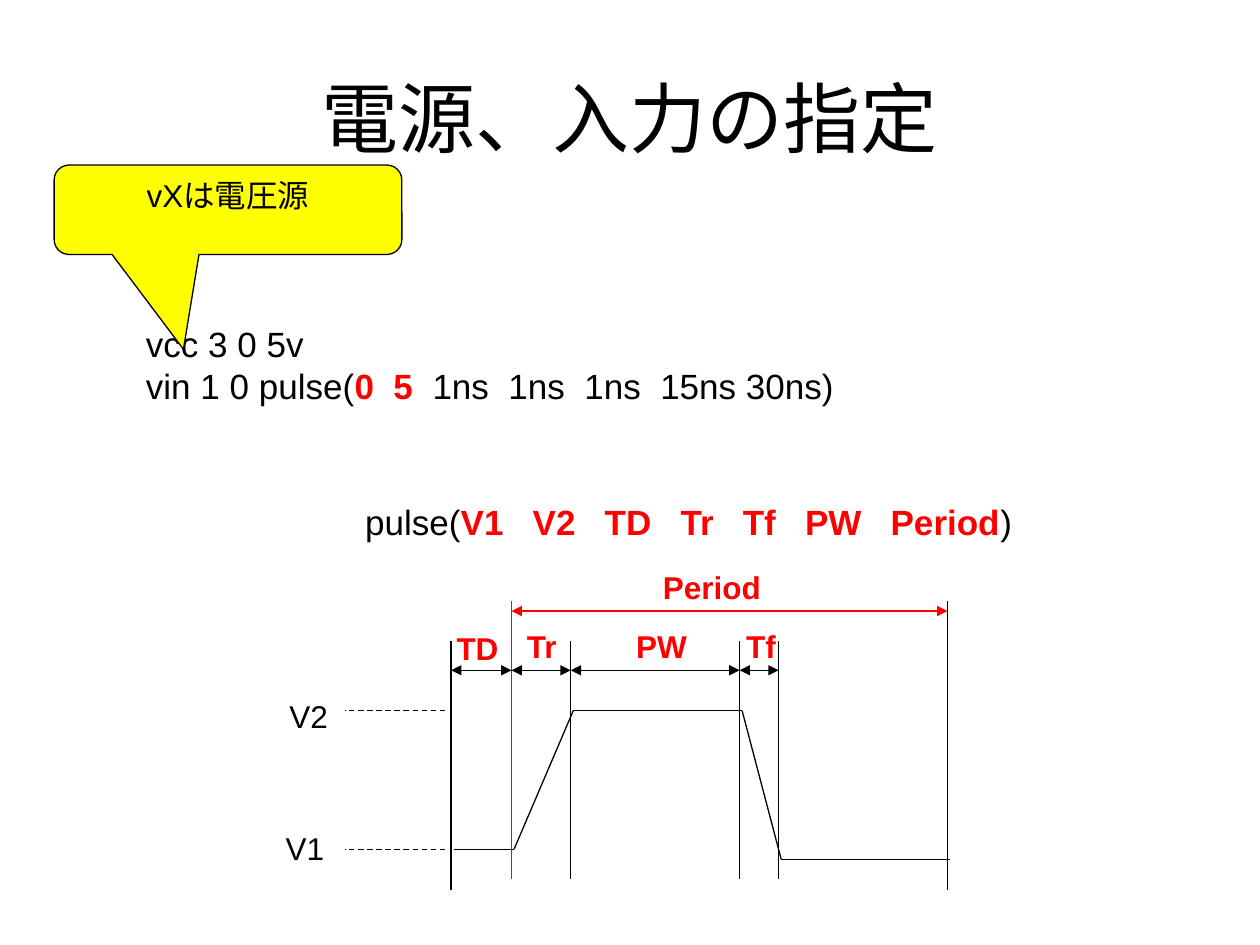
"""Build the slide on specifying power supplies and pulse inputs."""
from itertools import pairwise

from lxml import etree
from pptx import Presentation
from pptx.dml.color import RGBColor
from pptx.enum.dml import MSO_LINE
from pptx.enum.shapes import MSO_CONNECTOR, MSO_SHAPE
from pptx.enum.text import MSO_ANCHOR, PP_ALIGN
from pptx.oxml.ns import qn
from pptx.util import Inches, Pt

STRAIGHT = MSO_CONNECTOR.STRAIGHT
CALLOUT = MSO_SHAPE.ROUNDED_RECTANGULAR_CALLOUT
DASH = MSO_LINE.DASH
LEFT, CENTER = PP_ALIGN.LEFT, PP_ALIGN.CENTER
TOP, MIDDLE = MSO_ANCHOR.TOP, MSO_ANCHOR.MIDDLE

THEME = {
    "font": "Arial",
    "ink": RGBColor(0, 0, 0),
    "accent": RGBColor(255, 0, 0),
    "callout": RGBColor(255, 255, 0),
    "title": 44, "code": 20, "label": 18, "line": 0.75,
}

TITLE = "電源、入力の指定"
CALLOUT_NOTE = "vXは電圧源"
CALLOUT_SHAPE = (-0.128, 1.561, 0.167)
NETLIST = [
    ["vcc 3 0 5v"],
    ["vin 1 0 pulse(", ("0  5  ",), "1ns  1ns  1ns  15ns 30ns)"],
]
PULSE_SYNTAX = [["pulse(", ("V1   V2   TD   Tr   Tf   PW   Period",), ")"]]

LEVELS = [("V1", 2.42, 6.53, 6.74), ("V2", 2.45, 5.48, 5.64)]
LEVEL_DASH = (3.53, 2.74)
WAVEFORM = [(3.6, 6.74), (4.08, 6.74), (4.55, 5.64),
            (5.89, 5.64), (6.2, 6.82), (7.54, 6.82)]
MARKERS = [(3.58, 5.09, 7.06, "ink"), (4.06, 4.77, 6.98, "accent"),
           (4.53, 5.09, 6.98, "ink"), (5.87, 5.09, 6.98, "ink"),
           (6.18, 5.09, 6.98, "ink"), (7.52, 4.77, 7.06, "ink")]
INTERVAL_Y, PERIOD_Y = 5.32, 4.85
INTERVAL_LABELS = [("TD", 3.79, 4.94), ("Tr", 4.3, 4.93), ("PW", 5.25, 4.93),
                   ("Tf", 6.04, 4.93), ("Period", 5.65, 4.46)]
LABEL_SIZE = (1, 0.4)


def write(frame, paragraphs, size="label", align=LEFT, anchor=TOP, wrap=True, accent=False):
    """Fill a frame with paragraphs of runs; a run given as a tuple is accented."""
    frame.word_wrap = wrap
    frame.vertical_anchor = anchor
    for index, pieces in enumerate(paragraphs):
        paragraph = frame.add_paragraph() if index else frame.paragraphs[0]
        paragraph.alignment = align
        for piece in pieces:
            strong = accent or isinstance(piece, tuple)
            run = paragraph.add_run()
            run.text = piece[0] if isinstance(piece, tuple) else piece
            run.font.name = THEME["font"]
            run.font.size = Pt(THEME[size])
            run.font.bold = strong
            run.font.color.rgb = THEME["accent" if strong else "ink"]


def add_text(slide, box, paragraphs, **text_format):
    """Add a text box at box (left, top, width, height)."""
    textbox = slide.shapes.add_textbox(*map(Inches, box))
    write(textbox.text_frame, paragraphs, **text_format)


def add_label(slide, text, center, top, accent=False):
    """Add a one-line label centred on a horizontal position."""
    width, height = LABEL_SIZE
    add_text(slide, (center - width / 2, top, width, height), [[text]],
             align=CENTER, wrap=False, accent=accent)


def add_line(slide, start, end, color="ink", dash=None, arrows=False):
    """Add a thin straight line, dashed or double-headed on request."""
    connector = slide.shapes.add_connector(STRAIGHT, *map(Inches, (*start, *end)))
    connector.line.color.rgb = THEME[color]
    connector.line.width = Pt(THEME["line"])
    if dash:
        connector.line.dash_style = dash
    if arrows:
        outline = connector.line._get_or_add_ln()
        for tip in ("a:headEnd", "a:tailEnd"):
            etree.SubElement(outline, qn(tip), type="triangle")
    etree.SubElement(connector._element.spPr, qn("a:effectLst"))


def add_callout(slide):
    """Add the yellow note pointing at the netlist."""
    callout = slide.shapes.add_shape(CALLOUT, *map(Inches, (0.43, 1.31, 2.76, 0.71)))
    for index, value in enumerate(CALLOUT_SHAPE):
        callout.adjustments[index] = value
    callout.shadow.inherit = False
    callout.fill.solid()
    callout.fill.fore_color.rgb = THEME["callout"]
    callout.line.color.rgb = THEME["ink"]
    callout.line.width = Pt(THEME["line"])
    write(callout.text_frame, [[CALLOUT_NOTE]], align=CENTER)


def add_timing_diagram(slide):
    """Draw the pulse waveform with its levels, markers and intervals."""
    for start, end in pairwise(WAVEFORM):
        add_line(slide, start, end)
    dash_start, dash_end = LEVEL_DASH
    for name, center, top, level in LEVELS:
        add_line(slide, (dash_start, level), (dash_end, level), dash=DASH)
        add_label(slide, name, center, top)
    for x, top, bottom, color in MARKERS:
        add_line(slide, (x, top), (x, bottom), color=color)
    edges = [marker[0] for marker in MARKERS]
    for start, end in pairwise(edges[:-1]):
        add_line(slide, (start, INTERVAL_Y), (end, INTERVAL_Y), arrows=True)
    add_line(slide, (edges[1], PERIOD_Y), (edges[-1], PERIOD_Y), color="accent", arrows=True)
    for name, center, top in INTERVAL_LABELS:
        add_label(slide, name, center, top, accent=True)


def main():
    """Assemble and save the slide."""
    deck = Presentation()
    deck.slide_width, deck.slide_height = Inches(10), Inches(7.5)
    slide = deck.slides.add_slide(deck.slide_layouts[5])
    title = slide.shapes.title
    title.left, title.top, title.width, title.height = map(Inches, (0.5, 0.3, 9, 1.25))
    write(title.text_frame, [[TITLE]], size="title", align=CENTER, anchor=MIDDLE)
    add_text(slide, (1.06, 2.51, 6.22, 0.77), NETLIST, size="code")
    add_callout(slide)
    add_text(slide, (2.8, 3.92, 5.43, 0.44), PULSE_SYNTAX, size="code")
    add_timing_diagram(slide)
    deck.save("out.pptx")


if __name__ == "__main__":
    main()
